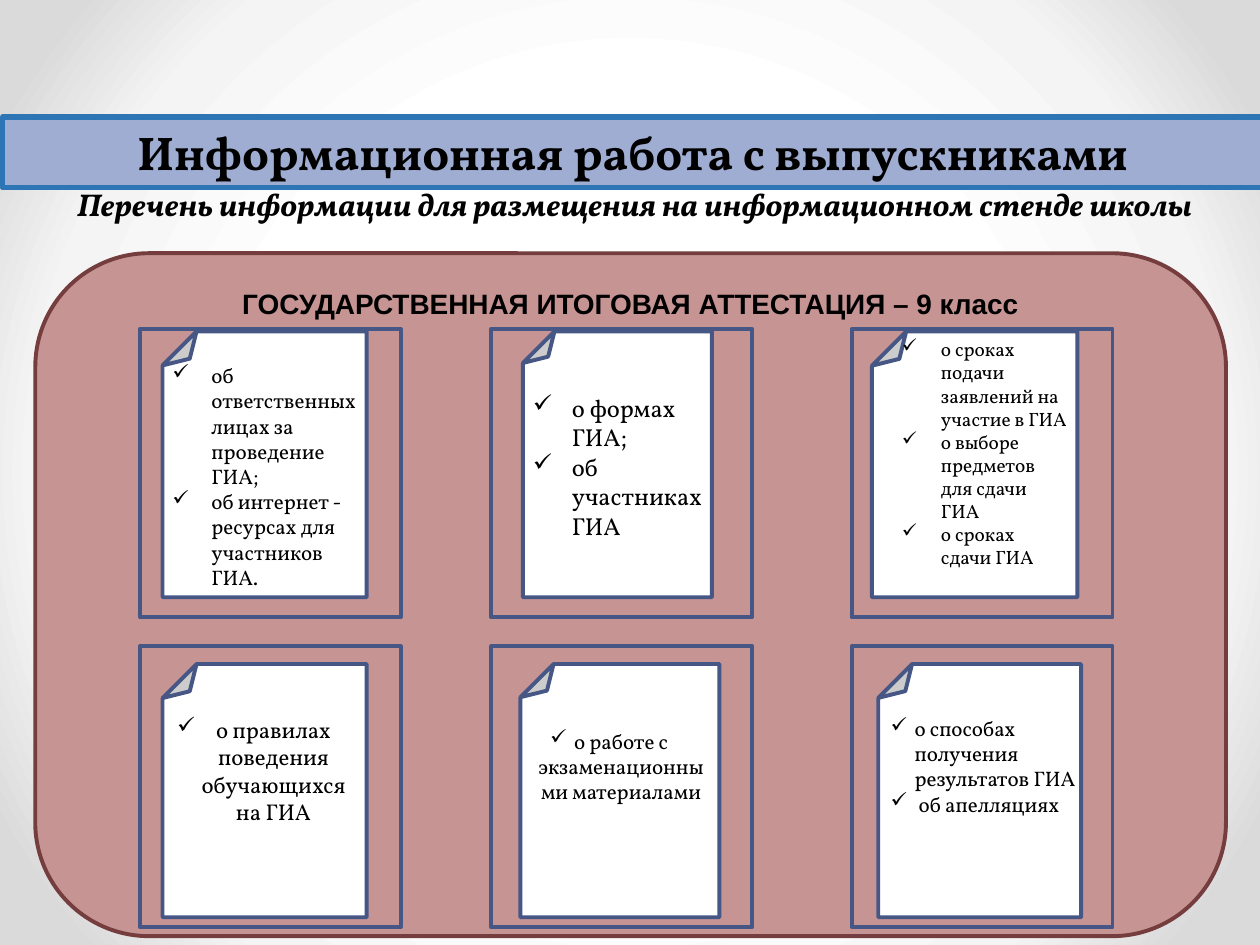
from lxml import etree
from pptx import Presentation
from pptx.dml.color import RGBColor
from pptx.enum.shapes import MSO_SHAPE
from pptx.enum.text import MSO_ANCHOR, PP_ALIGN
from pptx.oxml.ns import qn
from pptx.util import Inches, Pt

RECT, ROUND, PAGE = MSO_SHAPE.RECTANGLE, MSO_SHAPE.ROUNDED_RECTANGLE, MSO_SHAPE.FOLDED_CORNER
TOP, LEFT, CENTER = MSO_ANCHOR.TOP, PP_ALIGN.LEFT, PP_ALIGN.CENTER

THEME = {
    "serif": "Vollkorn", "sans": "Arial", "text": "000000",
    "banner": "A0ADD2", "banner_line": "2E75B6",
    "board": "C79494", "board_line": "753D3D",
    "page": "FFFFFF", "page_line": "475785",
    "title": 27, "subtitle": 18, "heading": 16,
    "large": 14, "medium": 13, "normal": 12, "small": 11,
    "line": 2.25, "thick": 3,
    "background": [(50, "FFFFFF"), (76, "F4F4F4"), (92, "DADADA")],
}

prs = Presentation()
prs.slide_width, prs.slide_height = Inches(10), Inches(7.5)
COL, ROW = prs.slide_width / 100, prs.slide_height / 75
s = prs.slides.add_slide(prs.slide_layouts[6])


def add_box(kind, x, y, w, h, line, fill=None, width=THEME["line"]):
    sp = s.shapes.add_shape(kind, int(x * COL), int(y * ROW), int(w * COL), int(h * ROW))
    sp.shadow.inherit = False
    if fill:
        sp.fill.solid()
        sp.fill.fore_color.rgb = RGBColor.from_string(THEME[fill])
    else:
        sp.fill.background()
    sp.line.color.rgb = RGBColor.from_string(THEME[line])
    sp.line.width = Pt(width)
    return sp


def write(sp, lines, size, align=CENTER, font="serif", bold=False, italic=False, indent=0):
    tf = sp.text_frame
    tf.word_wrap = True
    tf.vertical_anchor = TOP
    tf.text = "\n".join(lines)
    for p in tf.paragraphs:
        p.alignment = align
        if indent:
            pPr = p._p.get_or_add_pPr()
            pPr.set("marL", str(int(indent * COL)))
            pPr.set("indent", str(int(-indent * COL)))
            etree.SubElement(pPr, qn("a:buChar")).set("char", "✓")
        for r in p.runs:
            r.font.name = THEME[font]
            r.font.size = Pt(THEME[size])
            r.font.bold = bold
            r.font.italic = italic
            r.font.color.rgb = RGBColor.from_string(THEME["text"])


fill = s.background.fill
fill.gradient()
grad = s.background._cSld.find(".//" + qn("a:gradFill"))
for child in list(grad):
    grad.remove(child)
stops = etree.SubElement(grad, qn("a:gsLst"))
for position, color in THEME["background"]:
    stop = etree.SubElement(stops, qn("a:gs"), pos=str(position * 1000))
    etree.SubElement(stop, qn("a:srgbClr"), val=color)
path = etree.SubElement(grad, qn("a:path"), {"path": "circle"})
etree.SubElement(path, qn("a:fillToRect"), {side: "50000" for side in "ltrb"})

sp = add_box(RECT, 0.2, 9.3, 100, 5.6, "banner_line", "banner", THEME["thick"])
write(sp, ["Информационная работа с выпускниками"], "title", bold=True)

sp = add_box(ROUND, 2.8, 20.1, 94.5, 54.2, "board_line", "board")
sp.text_frame.margin_top = 0
write(sp, ["ГОСУДАРСТВЕННАЯ ИТОГОВАЯ АТТЕСТАЦИЯ – 9 класс"], "heading", font="sans", bold=True)

sp = s.shapes.add_textbox(int(0.4 * COL), int(14.2 * ROW), int(100 * COL), int(4 * ROW))
write(sp, ["Перечень информации для размещения на информационном стенде школы"],
      "subtitle", bold=True, italic=True)

FRAME_X, FRAME_W = (11.1, 39, 67.6), 20.7
FRAME_Y, FRAME_H = (26.1, 51.3), (22.9, 22.3)
PAGE_Y, PAGE_H = (26.3, 52.7), (21.1, 20.1)

cards = [
    (0, 0, 12.9, 16.2, (12.7, 28.3, 17, 20.9), "normal", LEFT, 3.1,
     ["об ответственных лицах за проведение ГИА;", "об интернет - ресурсах для участников ГИА."]),
    (0, 1, 41.5, 15, (41.3, 30.7, 15.5, 12.8), "large", LEFT, 3.1,
     ["о формах ГИА;", "об участниках ГИА"]),
    (0, 2, 69.2, 16.3, (70.6, 26.3, 15.2, 27.9), "small", LEFT, 3.1,
     ["о сроках подачи заявлений на участие в ГИА", "о выборе предметов для сдачи ГИА",
      "о сроках сдачи ГИА"]),
    (1, 0, 12.9, 16.2, (11.6, 56.3, 17.1, 9.8), "medium", CENTER, 3.1,
     ["о правилах поведения обучающихся на ГИА"]),
    (1, 1, 41.3, 15.8, (39.3, 57.3, 18.1, 7.1), "normal", CENTER, 1.9,
     ["о работе с экзаменационными материалами"]),
    (1, 2, 69.7, 16.1, (69.7, 56.3, 18.1, 9.1), "normal", LEFT, 1.9,
     ["о способах получения результатов ГИА", " об апелляциях"]),
]

for row, col, page_x, page_w, (x, y, w, h), size, align, indent, lines in cards:
    sp = add_box(PAGE, page_x, PAGE_Y[row], page_w, PAGE_H[row], "page_line", "page")
    sp.rotation = 180
    add_box(RECT, FRAME_X[col], FRAME_Y[row], FRAME_W, FRAME_H[row], "page_line")
    sp = s.shapes.add_textbox(int(x * COL), int(y * ROW), int(w * COL), int(h * ROW))
    write(sp, lines, size, align, indent=indent)

prs.save("out.pptx")
